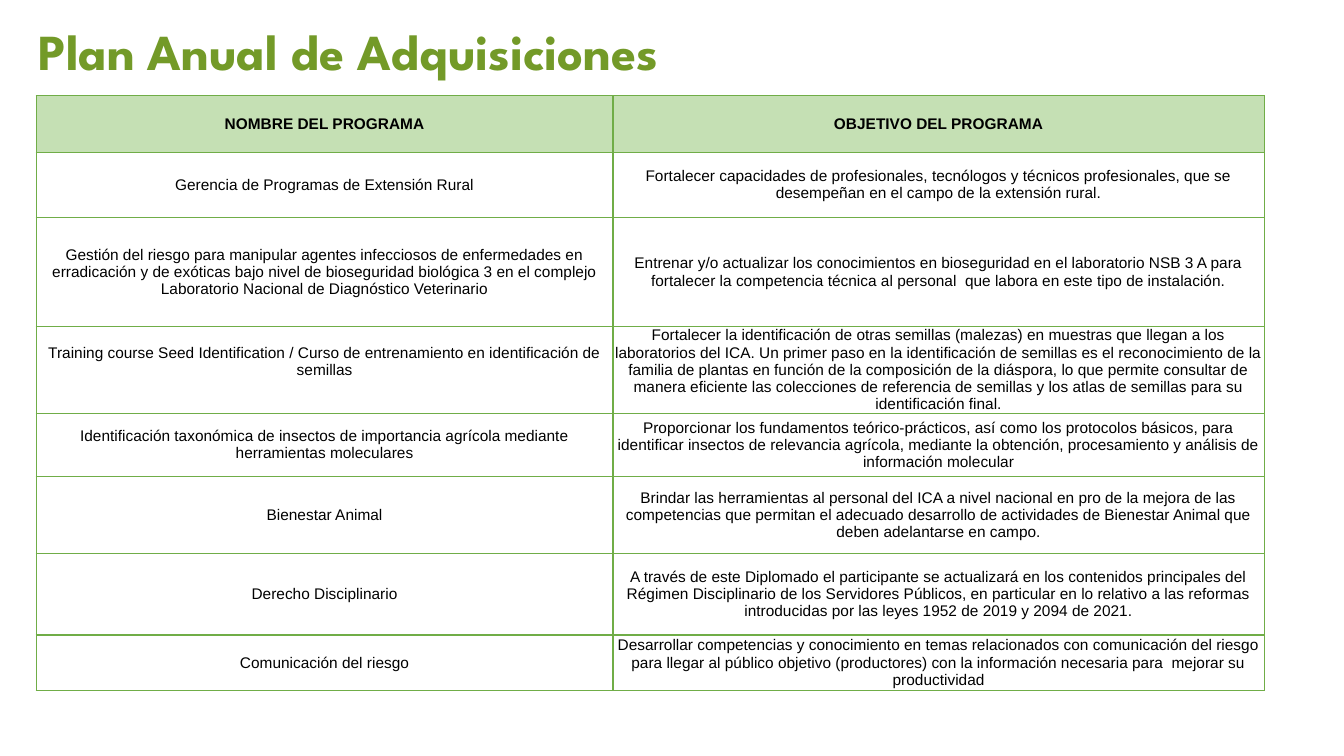
"""Build the annual procurement plan slide with its table of training programmes."""
from lxml.etree import SubElement
from pptx import Presentation
from pptx.dml.color import RGBColor
from pptx.enum.text import MSO_ANCHOR, MSO_AUTO_SIZE, PP_ALIGN
from pptx.oxml.ns import qn
from pptx.util import Inches, Pt

TITLE = "Plan Anual de Adquisiciones"
HEADERS = ("NOMBRE DEL PROGRAMA", "OBJETIVO DEL PROGRAMA")
PROGRAMS = [
    ("Gerencia de Programas de Extensión Rural",
     "Fortalecer capacidades de profesionales, tecnólogos y técnicos profesionales, que se "
     "desempeñan en el campo de la extensión rural."),
    ("Gestión del riesgo para manipular agentes infecciosos de enfermedades en erradicación y de "
     "exóticas bajo nivel de bioseguridad biológica 3 en el complejo Laboratorio Nacional de "
     "Diagnóstico Veterinario",
     "Entrenar y/o actualizar los conocimientos en bioseguridad en el laboratorio NSB 3 A para "
     "fortalecer la competencia técnica al personal  que labora en este tipo de instalación."),
    ("Training course Seed Identification / Curso de entrenamiento en identificación de semillas",
     "Fortalecer la identificación de otras semillas (malezas) en muestras que llegan a los "
     "laboratorios del ICA. Un primer paso en la identificación de semillas es el reconocimiento "
     "de la familia de plantas en función de la composición de la diáspora, lo que permite "
     "consultar de manera eficiente las colecciones de referencia de semillas y los atlas de "
     "semillas para su identificación final."),
    ("Identificación taxonómica de insectos de importancia agrícola mediante herramientas "
     "moleculares",
     "Proporcionar los fundamentos teórico-prácticos, así como los protocolos básicos, para "
     "identificar insectos de relevancia agrícola, mediante la obtención, procesamiento y "
     "análisis de información molecular"),
    ("Bienestar Animal",
     "Brindar las herramientas al personal del ICA a nivel nacional en pro de la mejora de las "
     "competencias que permitan el adecuado desarrollo de actividades de Bienestar Animal que "
     "deben adelantarse en campo."),
    ("Derecho Disciplinario",
     "A través de este Diplomado el participante se actualizará en los contenidos principales "
     "del Régimen Disciplinario de los Servidores Públicos, en particular en lo relativo a las "
     "reformas introducidas por las leyes 1952 de 2019 y 2094 de 2021."),
    ("Comunicación del riesgo",
     "Desarrollar competencias y conocimiento en temas relacionados con comunicación del riesgo "
     "para llegar al público objetivo (productores) con la información necesaria para  mejorar "
     "su productividad"),
]
COLUMN_WIDTHS = (5.72, 6.46)
ROW_HEIGHTS = (0.56, 0.65, 1.08, 0.86, 0.63, 0.76, 0.81, 0.55)
SEED_COURSE_ROW = 3
TITLE_GREEN, BORDER_GREEN, HEADER_GREEN, BLACK = "739A28", "70AD47", "C5E0B4", "000000"


def color(hex_code):
    """Turn a hex string into a colour."""
    return RGBColor.from_string(hex_code)


def format_font(paragraph, name, size, hex_code, bold):
    """Set the font of a whole paragraph."""
    font = paragraph.font
    font.name, font.size, font.bold = name, Pt(size), bold
    font.color.rgb = color(hex_code)


def add_borders(cell):
    """Draw a thin green line on all four sides of a cell."""
    properties = cell._tc.get_or_add_tcPr()
    for side in ("lnL", "lnR", "lnT", "lnB"):
        line = SubElement(properties, qn(f"a:{side}"), w=str(Pt(1)))
        fill = SubElement(line, qn("a:solidFill"))
        SubElement(fill, qn("a:srgbClr"), val=BORDER_GREEN)


def add_title(slide):
    """Place the slide title."""
    title = slide.shapes.title
    title.left, title.top = Inches(0.28), Inches(0.15)
    title.width, title.height = Inches(7.14), Inches(0.71)
    frame = title.text_frame
    frame.text = TITLE
    frame.word_wrap = False
    frame.auto_size = MSO_AUTO_SIZE.NONE
    frame.vertical_anchor = MSO_ANCHOR.TOP
    paragraph = frame.paragraphs[0]
    paragraph.alignment = PP_ALIGN.LEFT
    paragraph.line_spacing = 1.0
    format_font(paragraph, "League Spartan", 36, TITLE_GREEN, True)


def fill_cell(cell, text, is_header):
    """Write and format one table cell."""
    cell.text = text
    cell.vertical_anchor = MSO_ANCHOR.MIDDLE
    cell.margin_left = cell.margin_right = cell.margin_top = cell.margin_bottom = 0
    add_borders(cell)
    if is_header:
        cell.fill.solid()
        cell.fill.fore_color.rgb = color(HEADER_GREEN)
    else:
        cell.fill.background()
    paragraph = cell.text_frame.paragraphs[0]
    paragraph.alignment = PP_ALIGN.CENTER
    format_font(paragraph, "Arial", 11, BLACK, is_header)


def add_program_table(slide):
    """Build the table of programmes and their objectives."""
    rows = [HEADERS, *PROGRAMS]
    table = slide.shapes.add_table(
        len(rows), len(HEADERS), Inches(0.36), Inches(0.95),
        Inches(sum(COLUMN_WIDTHS)), Inches(sum(ROW_HEIGHTS))).table
    table.first_row = table.horz_banding = False
    for column, width in zip(table.columns, COLUMN_WIDTHS):
        column.width = Inches(width)
    for row_index, (texts, height) in enumerate(zip(rows, ROW_HEIGHTS)):
        table.rows[row_index].height = Inches(height)
        for column_index, text in enumerate(texts):
            fill_cell(table.cell(row_index, column_index), text, row_index == 0)
    table.cell(SEED_COURSE_ROW, 0).margin_bottom = Inches(0.17)


def main():
    """Create and save the presentation."""
    presentation = Presentation()
    presentation.slide_width, presentation.slide_height = Inches(13.33), Inches(7.5)
    slide = presentation.slides.add_slide(presentation.slide_layouts.get_by_name("Title Only"))
    add_program_table(slide)
    add_title(slide)
    presentation.save("out.pptx")


if __name__ == "__main__":
    main()
